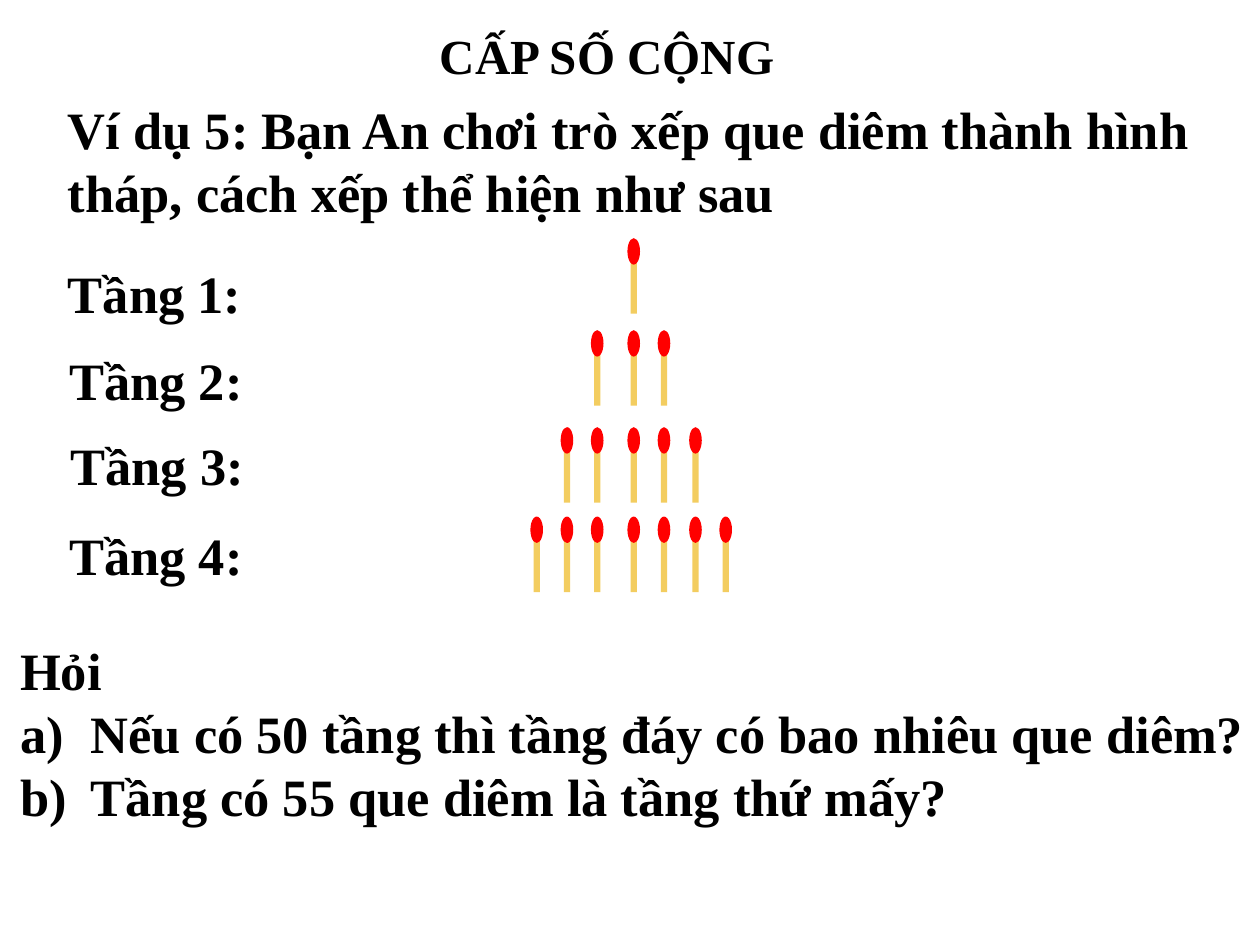
from pptx import Presentation
from pptx.dml.color import RGBColor
from pptx.enum.shapes import MSO_SHAPE as Preset
from pptx.enum.text import MSO_ANCHOR as Anchor, MSO_AUTO_SIZE as AutoSize, PP_ALIGN as Align
from pptx.oxml.ns import qn
from pptx.util import Inches, Pt
from lxml import etree

MATCH_CENTERS = [4.26, 4.5, 4.74, 5.03, 5.27, 5.52, 5.76]
TIERS = [(0.44, 2.02, 1.89), (0.45, 2.71, 2.62), (0.46, 3.39, 3.39), (0.45, 4.1, 4.1)]
QUESTIONS = [
    "Hỏi",
    "Nếu có 50 tầng thì tầng đáy có bao nhiêu que diêm?",
    "Tầng có 55 que diêm là tầng thứ mấy?",
]


def color(value):
    return RGBColor.from_string(value)


def place(shape, left, top, width, height):
    shape.left, shape.top = Inches(left), Inches(top)
    shape.width, shape.height = Inches(width), Inches(height)


def write(shape, lines, size=30):
    frame = shape.text_frame
    frame.text = "\n".join(lines)
    frame.word_wrap = True
    frame.auto_size = AutoSize.NONE
    frame.vertical_anchor = Anchor.TOP
    for paragraph in frame.paragraphs:
        paragraph.alignment = Align.LEFT
        paragraph.space_before = Pt(0)
        font = paragraph.font
        font.name, font.size, font.bold = "Times New Roman", Pt(size), True
        font.color.rgb = color("000000")


def add_text(slide, text, left, top, width, height):
    box = slide.shapes.add_textbox(
        Inches(left), Inches(top), Inches(width), Inches(height))
    write(box, [text])


def set_bullet(paragraph, numbered):
    properties = paragraph._p.get_or_add_pPr()
    indent = Inches(0.56) if numbered else 0
    properties.set("marL", str(indent))
    properties.set("indent", str(-indent))
    bullet = etree.Element(qn("a:buAutoNum" if numbered else "a:buNone"))
    if numbered:
        bullet.set("type", "alphaLcParenR")
    properties.find(qn("a:spcBef")).addnext(bullet)


def add_part(group, preset, center, top, width, height, fill):
    shape = group.shapes.add_shape(
        preset, Inches(center - width / 2), Inches(top), Inches(width), Inches(height))
    shape.shadow.inherit = False
    shape.fill.solid()
    shape.fill.fore_color.rgb = color(fill)
    shape.line.fill.background()


def add_match(slide, center, top):
    group = slide.shapes.add_group_shape()
    add_part(group, Preset.RECTANGLE, center, top + 0.19, 0.05, 0.41, "F3CD60")
    add_part(group, Preset.OVAL, center, top, 0.1, 0.21, "FF0000")


def add_tower(slide):
    middle = len(MATCH_CENTERS) // 2
    for index, (left, label_top, match_top) in enumerate(TIERS):
        add_text(slide, f"Tầng {index + 1}:", left, label_top, 1.81, 0.61)
        for center in MATCH_CENTERS[middle - index:middle + index + 1]:
            add_match(slide, center, match_top)


def main():
    presentation = Presentation()
    presentation.slide_width, presentation.slide_height = Inches(10), Inches(7.5)
    slide = presentation.slides.add_slide(presentation.slide_layouts[1])

    title, questions = slide.placeholders
    place(title, 3.29, 0.15, 3.75, 0.57)
    write(title, ["CẤP SỐ CỘNG"], 28)
    title.text_frame.margin_left = Inches(0.2)

    add_text(
        slide,
        "Ví dụ 5: Bạn An chơi trò xếp que diêm thành hình tháp, cách xếp thể hiện như sau",
        0.44, 0.72, 9.19, 1.11)
    add_tower(slide)

    place(questions, 0.06, 5.01, 10.32, 1.62)
    write(questions, QUESTIONS)
    for index, paragraph in enumerate(questions.text_frame.paragraphs):
        set_bullet(paragraph, index > 0)

    presentation.save("out.pptx")


if __name__ == "__main__":
    main()
